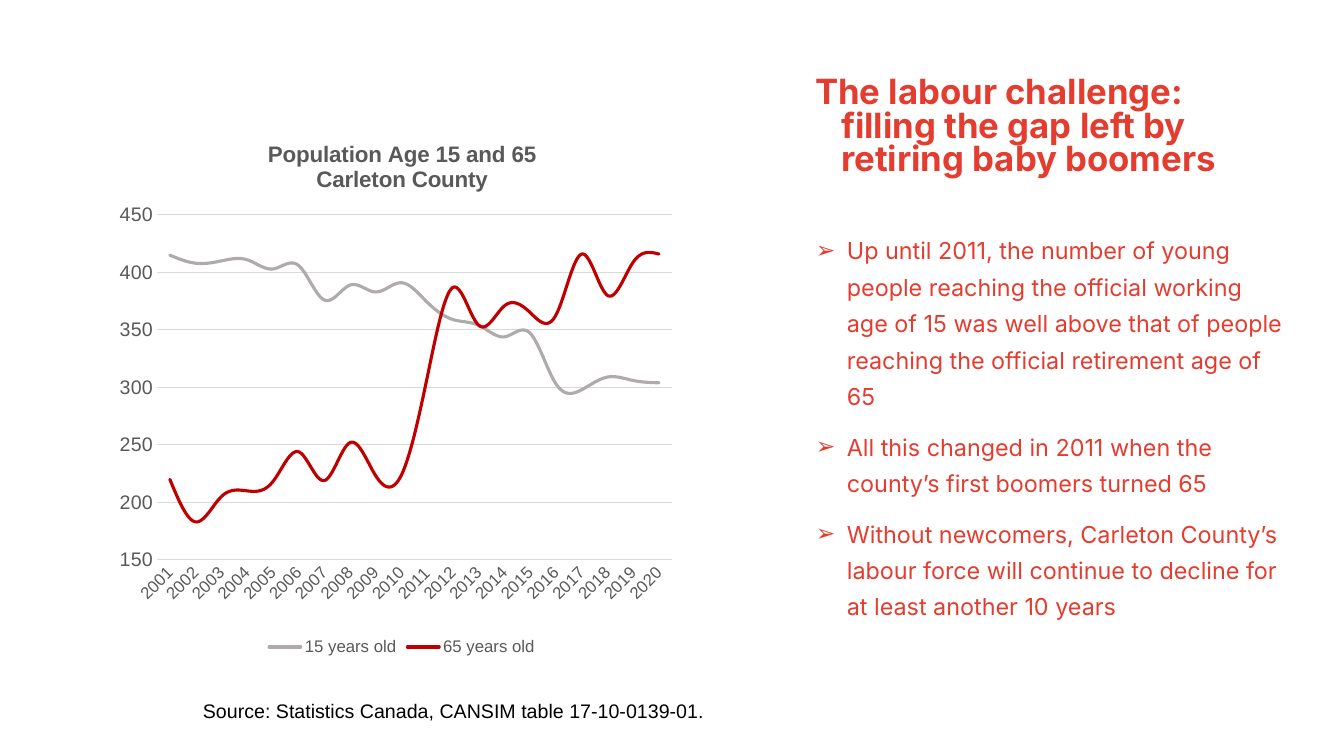
from lxml import etree
from pptx import Presentation, util as u
from pptx.chart.data import CategoryChartData
from pptx.dml.color import RGBColor
from pptx.enum import chart as charts, text
from pptx.oxml import ns

COLORS = {
    "accent": "E43D30", "black": "000000", "label": "595959",
    "grid": "D9D9D9", "young": "AFABAB", "retiring": "C00000",
}
PX = 914400 / 100.8

HEADING = "The labour challenge: filling the gap left by retiring baby boomers"
POINTS = [
    "Up until 2011, the number of young people reaching the official working age of 15 "
    "was well above that of people reaching the official retirement age of 65",
    "All this changed in 2011 when the county’s first boomers turned 65",
    "Without newcomers, Carleton County’s labour force will continue to decline for "
    "at least another 10 years",
]
SOURCE = "Source: Statistics Canada, CANSIM table 17-10-0139-01."
CHART_TITLE = ["Population Age 15 and 65", "Carleton County"]
YEARS = [str(year) for year in range(2001, 2021)]
SERIES = [
    ("15 years old", "young", [415, 408, 410, 411, 403, 406, 376, 389, 383, 391,
                               374, 359, 354, 344, 347, 303, 298, 309, 306, 304]),
    ("65 years old", "retiring", [220, 183, 205, 210, 218, 244, 219, 252, 223, 224,
                                  309, 387, 354, 371, 365, 363, 416, 380, 409, 416]),
]


def px(value):
    return u.Emu(round(value * PX))


def set_values(target, values):
    for name, value in values.items():
        setattr(target, name, value)


def style_font(font, size, color, name="Arial", bold=False):
    set_values(font, {"size": u.Pt(size), "name": name, "bold": bold})
    font.color.rgb = RGBColor.from_string(COLORS[color])


def style_line(line, color, width):
    line.color.rgb = RGBColor.from_string(COLORS[color])
    line.width = u.Pt(width)


def place_in_chart(parent, index, chart_size, **lengths):
    """Give a chart part a manual layout, in px from the chart's corner."""
    for old in parent.findall(ns.qn("c:layout")):
        parent.remove(old)
    layout = etree.Element(ns.qn("c:layout"))
    manual = etree.SubElement(layout, ns.qn("c:manualLayout"))
    values = {"xMode": "edge", "yMode": "edge"}
    if "w" in lengths:
        values = {"layoutTarget": "inner", **values}
    width, height = chart_size
    for name, length in lengths.items():
        values[name] = length / (width if name in "xw" else height)
    for name, value in values.items():
        etree.SubElement(manual, ns.qn(f"c:{name}"), val=str(value))
    parent.insert(index, layout)


class SlideBuilder:
    def __init__(self, presentation):
        self.slide = presentation.slides.add_slide(presentation.slide_layouts[5])

    def fill_text(self, shape, paragraphs, size, color, font="Arial", bold=False,
                  spacing=1.0, margin=0, hanging=0, bullet=None):
        frame = shape.text_frame
        set_values(frame, {
            "word_wrap": True, "auto_size": text.MSO_AUTO_SIZE.NONE,
            "vertical_anchor": text.MSO_ANCHOR.TOP,
        })
        for index, words in enumerate(paragraphs):
            paragraph = frame.add_paragraph() if index else frame.paragraphs[0]
            set_values(paragraph, {
                "alignment": text.PP_ALIGN.LEFT, "line_spacing": spacing,
                "space_before": u.Pt(10 if index else 0),
            })
            properties = paragraph._p.get_or_add_pPr()
            properties.set("marL", str(px(margin)))
            properties.set("indent", str(px(-hanging)))
            if bullet:
                bullet_color = etree.SubElement(properties, ns.qn("a:buClr"))
                etree.SubElement(bullet_color, ns.qn("a:srgbClr"), val=COLORS[color])
                etree.SubElement(properties, ns.qn("a:buFont"), typeface="Arial")
                etree.SubElement(properties, ns.qn("a:buChar"), char=bullet)
            run = paragraph.add_run()
            run.text = words
            style_font(run.font, size, color, font, bold)

    def title(self, box, words, **style):
        shape = self.slide.shapes.title
        set_values(shape, dict(zip(("left", "top", "width", "height"), map(px, box))))
        self.fill_text(shape, [words], **style)

    def text_box(self, box, paragraphs, **style):
        shape = self.slide.shapes.add_textbox(*map(px, box))
        self.fill_text(shape, paragraphs, **style)

    def line_chart(self, box, title, categories, series):
        data = CategoryChartData()
        data.categories = categories
        for name, _, values in series:
            data.add_series(name, values)
        chart = self.slide.shapes.add_chart(
            charts.XL_CHART_TYPE.LINE, *map(px, box), data).chart
        style_font(chart.font, 10, "black")
        self.chart_title(chart, title, box[2:])
        self.chart_axes(chart)
        chart.has_legend = True
        set_values(chart.legend, {
            "position": charts.XL_LEGEND_POSITION.BOTTOM, "include_in_layout": False})
        style_font(chart.legend.font, 12, "label")
        chart.plots[0].vary_by_categories = False
        for line, (_, color, _) in zip(chart.plots[0].series, series):
            line.smooth = True
            line.marker.style = charts.XL_MARKER_STYLE.NONE
            style_line(line.format.line, color, 2.25)
            outline = line._element.find(f"{ns.qn('c:spPr')}/{ns.qn('a:ln')}")
            outline.set("cap", "rnd")
        plot_area = chart._chartSpace.find(f".//{ns.qn('c:plotArea')}")
        place_in_chart(plot_area, 0, box[2:], x=41, y=92, w=515, h=345)

    def chart_title(self, chart, lines, chart_size):
        chart.has_title = True
        frame = chart.chart_title.text_frame
        for index, words in enumerate(lines):
            paragraph = frame.add_paragraph() if index else frame.paragraphs[0]
            run = paragraph.add_run()
            run.text = words
            style_font(run.font, 16, "label", bold=True)
        chart.chart_title.include_in_layout = False
        title = chart._chartSpace.find(f".//{ns.qn('c:title')}")
        place_in_chart(title, 1, chart_size, x=149, y=15)

    def chart_axes(self, chart):
        years, people = chart.category_axis, chart.value_axis
        for axis, size in ((years, 12), (people, 14)):
            axis.major_tick_mark = axis.minor_tick_mark = charts.XL_TICK_MARK.NONE
            style_font(axis.tick_labels.font, size, "label")
        style_line(years.format.line, "grid", 0.75)
        labels = years._element.find(f"{ns.qn('c:txPr')}/{ns.qn('a:bodyPr')}")
        labels.set("rot", "-2700000")
        set_values(people, {"minimum_scale": 150, "maximum_scale": 450,
                            "major_unit": 50, "has_major_gridlines": True})
        people.format.line.fill.background()
        style_line(people.major_gridlines.format.line, "grid", 0.75)


def main():
    presentation = Presentation()
    set_values(presentation, {"slide_width": px(1344), "slide_height": px(756)})
    builder = SlideBuilder(presentation)
    builder.title((780, 73, 513, 131), HEADING, size=24.8, color="accent", font="Inter",
                  bold=True, spacing=0.8, margin=51, hanging=26)
    builder.text_box((780, 223, 513, 436), POINTS, size=16.7, color="accent", font="Inter",
                     spacing=1.3, margin=57, hanging=31, bullet="➢")
    builder.line_chart((116, 123, 572, 537), CHART_TITLE, YEARS, SERIES)
    builder.text_box((193, 694, 943, 34), [SOURCE], size=14, color="black")
    presentation.save("out.pptx")


if __name__ == "__main__":
    main()
